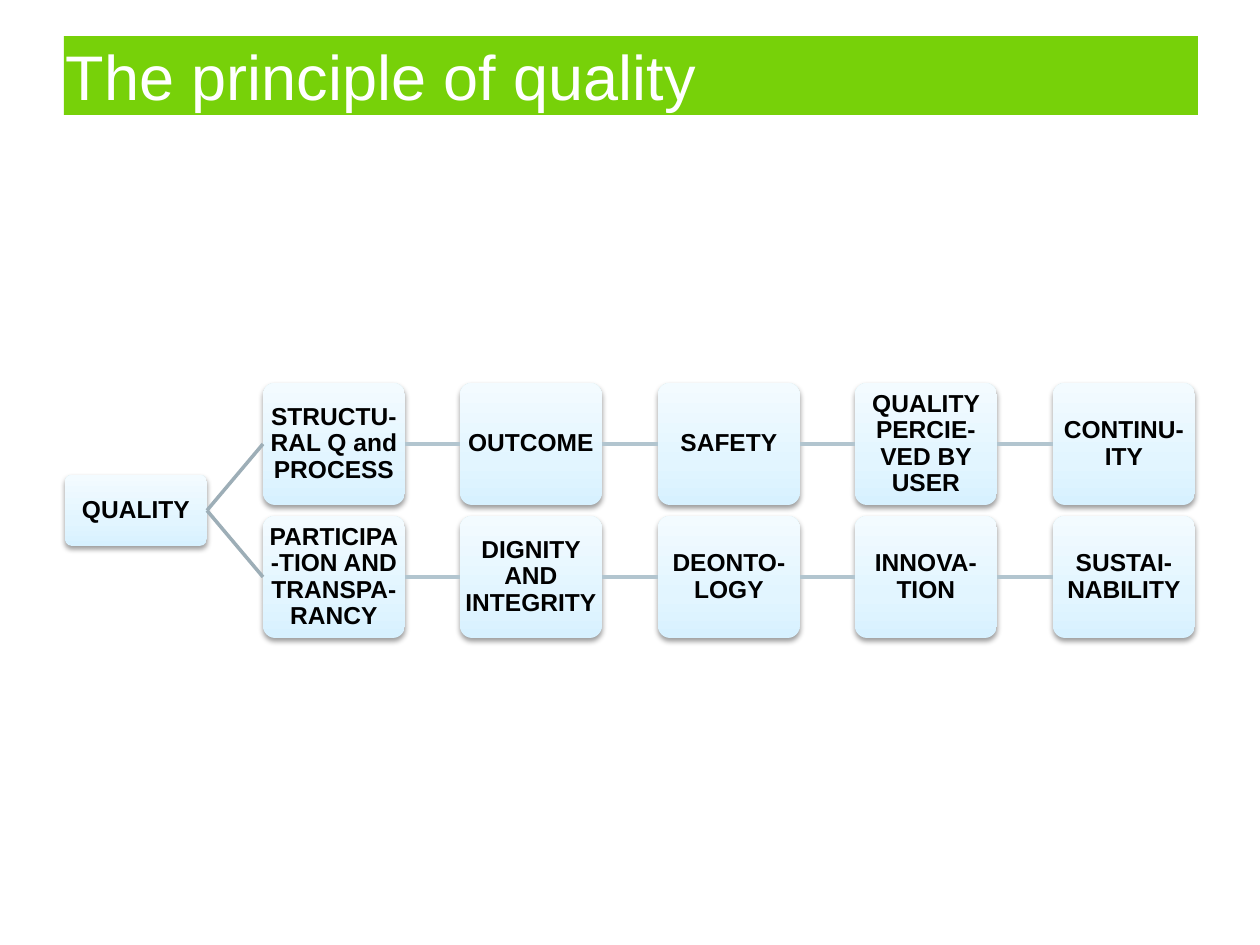
import copy
import pptx
import pptx.util
import pptx.dml.color
import pptx.enum.shapes
import pptx.enum.text
import pptx.oxml
import pptx.oxml.ns

PX = 914400 // 126
LEFT_SITE, RIGHT_SITE = 1, 3
STOPS = [(0, "D7F1FF"), (0.35, "E2F5FF"), (1, "F3FBFF")]
SHADOW = (
    '<a:outerShdw %s blurRad="40000" dist="20000" dir="5400000" rotWithShape="0">'
    '<a:srgbClr val="000000"><a:alpha val="38000"/></a:srgbClr></a:outerShdw>'
    % pptx.oxml.ns.nsdecls("a")
)
ROWS = [
    ["STRUCTU-RAL Q and PROCESS", "OUTCOME", "SAFETY",
     "QUALITY PERCIE-VED BY USER", "CONTINU-ITY"],
    ["PARTICIPA-TION AND TRANSPA-RANCY", "DIGNITY AND INTEGRITY",
     "DEONTO-LOGY", "INNOVA-TION", "SUSTAI-NABILITY"],
]


def color(value):
    return pptx.dml.color.RGBColor.from_string(value)


def place(sp, x, y, w, h):
    sp.left, sp.top, sp.width, sp.height = (v * PX for v in (x, y, w, h))


def format_text(sp, text, size, hex_color, align, inset_x, inset_y, bold=False):
    tf = sp.text_frame
    tf.word_wrap = True
    tf.auto_size = pptx.enum.text.MSO_AUTO_SIZE.NONE
    tf.vertical_anchor = pptx.enum.text.MSO_ANCHOR.MIDDLE
    tf.margin_left = tf.margin_right = inset_x * PX
    tf.margin_top = tf.margin_bottom = inset_y * PX
    tf.text = text
    p = tf.paragraphs[0]
    p.alignment = align
    font = p.runs[0].font
    font.name = "Arial"
    font.size = pptx.util.Pt(size)
    font.bold = bold
    font.color.rgb = color(hex_color)
    return p


def add_title(s, x, y, w, h):
    sp = s.shapes.title
    place(sp, x, y, w, h)
    sp.fill.solid()
    sp.fill.fore_color.rgb = color("77D109")
    format_text(sp, "The principle of quality", 36, "FFFFFF",
                pptx.enum.text.PP_ALIGN.LEFT, 2, 0)


def add_node(s, text, x, y, w, h):
    sp = s.shapes.add_shape(pptx.enum.shapes.MSO_SHAPE.ROUNDED_RECTANGLE,
                            x * PX, y * PX, w * PX, h * PX)
    sp.adjustments[0] = 0.1
    sp.fill.gradient()
    sp.fill.gradient_angle = 90
    first = sp._element.spPr.find(".//" + pptx.oxml.ns.qn("a:gs"))
    first.addnext(copy.deepcopy(first))
    for stop, (position, value) in zip(sp.fill.gradient_stops, STOPS):
        stop.position = position
        stop.color.rgb = color(value)
    sp.line.fill.background()
    sp.shadow.inherit = False
    effects = sp._element.spPr.find(pptx.oxml.ns.qn("a:effectLst"))
    effects.append(pptx.oxml.parse_xml(SHADOW))
    p = format_text(sp, text, 14, "000000", pptx.enum.text.PP_ALIGN.CENTER,
                    1, 1, bold=True)
    p.line_spacing = 0.9
    return sp


def add_link(s, start, end, hex_color):
    cx = s.shapes.add_connector(pptx.enum.shapes.MSO_CONNECTOR.STRAIGHT, 0, 0, 0, 0)
    cx.begin_connect(start, RIGHT_SITE)
    cx.end_connect(end, LEFT_SITE)
    cx.line.width = pptx.util.Pt(2)
    cx.line.color.rgb = color(hex_color)
    cx._element.spPr.append(
        pptx.oxml.parse_xml("<a:effectLst %s/>" % pptx.oxml.ns.nsdecls("a")))


def add_tree(s, x, y, w, h):
    node_w, row_h, root_h = 142, 122, 71
    root = add_node(s, "QUALITY", x, y + (h - root_h) // 2, node_w, root_h)
    for i, labels in enumerate(ROWS):
        top = y + i * (h - row_h)
        previous = root
        for col, label in enumerate(labels, 1):
            left = x + round(col * (w - node_w) / len(labels))
            node = add_node(s, label, left, top, node_w, row_h)
            add_link(s, previous, node, "9DAEB7" if previous is root else "B2C5CF")
            previous = node


def main():
    prs = pptx.Presentation()
    prs.slide_width = pptx.util.Inches(10)
    prs.slide_height = pptx.util.Inches(7.5)
    s = prs.slides.add_slide(prs.slide_layouts[5])
    add_title(s, 64, 36, 1134, 79)
    add_tree(s, 65, 383, 1130, 255)
    prs.save("out.pptx")


if __name__ == "__main__":
    main()
